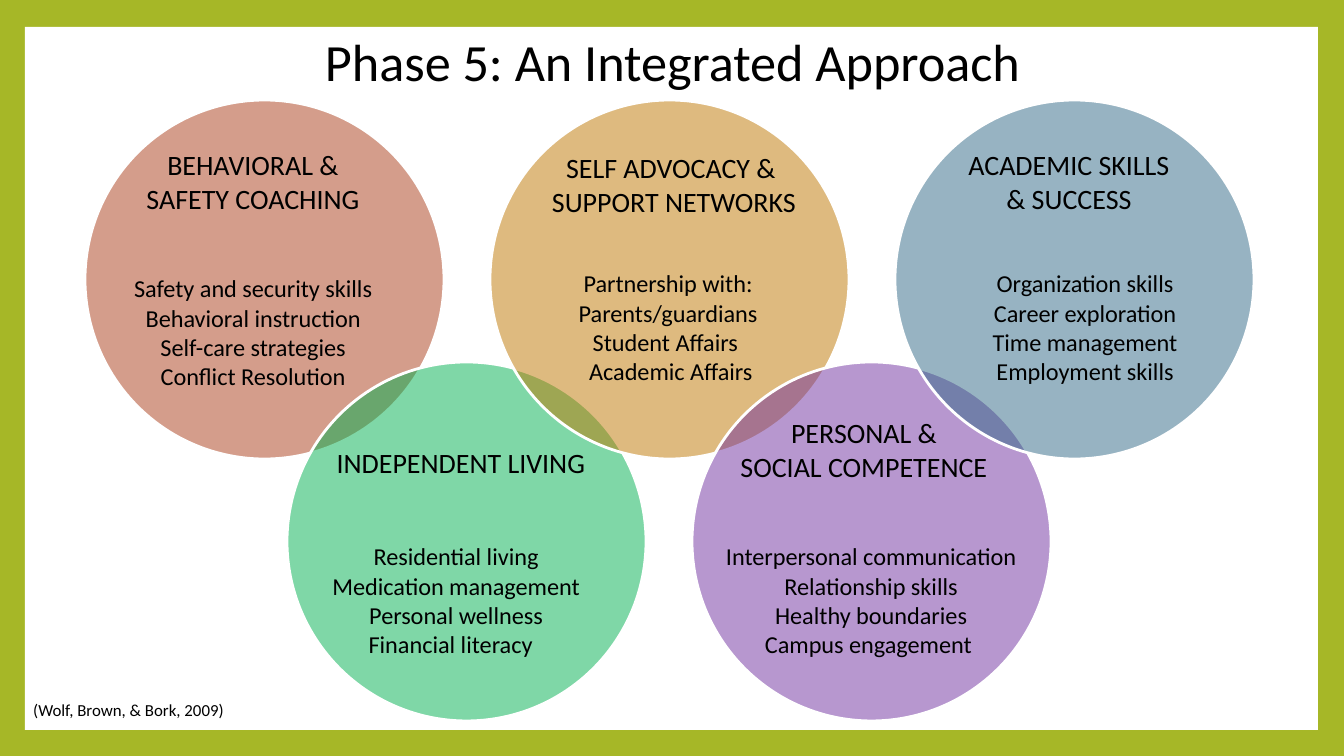
from lxml.etree import SubElement
from pptx import Presentation
from pptx.dml.color import RGBColor
from pptx.enum.shapes import MSO_SHAPE as Shape
from pptx.enum.text import PP_ALIGN as Align, MSO_AUTO_SIZE as AutoSize
from pptx.oxml.ns import qn
from pptx.util import Pt

PX = 914400 / 134.4


def paint(fill, color, opacity=100):
    fill.solid()
    fill.fore_color.rgb = RGBColor.from_string(color)
    if opacity < 100:
        node = fill._xPr.find(".//" + qn("a:srgbClr"))
        SubElement(node, qn("a:alpha"), val=str(opacity * 1000))


def add_text(left, top, width, height, text, size, align=Align.CENTER):
    box = page.shapes.add_textbox(*[round(n * PX) for n in (left, top, width, height)])
    frame = box.text_frame
    frame.word_wrap = True
    frame.text = text
    frame.auto_size = AutoSize.SHAPE_TO_FIT_TEXT
    for para in frame.paragraphs:
        para.alignment = align
        for span in para.runs:
            span.font.name = "Calibri"
            span.font.size = Pt(size)
            paint(span.font.fill, "000000")
    return box


deck = Presentation()
deck.slide_width, deck.slide_height = round(1344 * PX), round(756 * PX)
page = deck.slides.add_slide(deck.slide_layouts[6])

# Green frame around a white panel
paint(page.background.fill, "A6B727")
panel = page.shapes.add_shape(
    Shape.RECTANGLE, *[round(n * PX) for n in (25, 27, 1293, 703)])
panel.shadow.inherit = False
paint(panel.fill, "FFFFFF")
panel.line.fill.background()

# Five overlapping circles, alternating between two rows
rings = page.shapes.add_group_shape()
diameter = 359
for i, color in enumerate(["AB3C19", "00B050", "BE7600", "7030A0", "316886"]):
    left, top = 85 + 405 * i // 2, (100, 362)[i % 2]
    circle = rings.shapes.add_shape(
        Shape.OVAL, *[round(n * PX) for n in (left, top, diameter, diameter)])
    circle.shadow.inherit = False
    paint(circle.fill, color, opacity=50)
    paint(circle.line.fill, "FFFFFF")
    circle.line.width = Pt(1.5)

# Circle headings
headings = [
    (495, 144, "SELF ADVOCACY & \nSUPPORT NETWORKS"),
    (74, 141, "BEHAVIORAL &\nSAFETY COACHING"),
    (890, 141, "ACADEMIC SKILLS\n& SUCCESS"),
    (685, 409, "PERSONAL &\nSOCIAL COMPETENCE"),
    (282, 439, "INDEPENDENT LIVING"),
]
for left, top, text in headings:
    add_text(left, top, 358, 82 if "\n" in text else 47, text, 15)

# Circle skill lists
skills = [
    (692, 535, "Interpersonal communication\nRelationship skills\n"
               "Healthy boundaries\nCampus engagement "),
    (277, 535, "Residential living\nMedication management\n"
               "Personal wellness\nFinancial literacy  "),
    (74, 267, "Safety and security skills\nBehavioral instruction\n"
              "Self-care strategies\nConflict Resolution"),
    (906, 262, "Organization skills\nCareer exploration\n"
               "Time management\nEmployment skills"),
    (489, 262, "Partnership with: Parents/guardians\nStudent Affairs \n"
               " Academic Affairs"),
]
for left, top, text in skills:
    add_text(left, top, 358, 132, text, 13)

# Title and citation
add_text(243, 23, 859, 77, "Phase 5: An Integrated Approach", 28)
add_text(20, 693, 672, 34, "(Wolf, Brown, & Bork, 2009)", 9, Align.LEFT)

deck.save("out.pptx")
